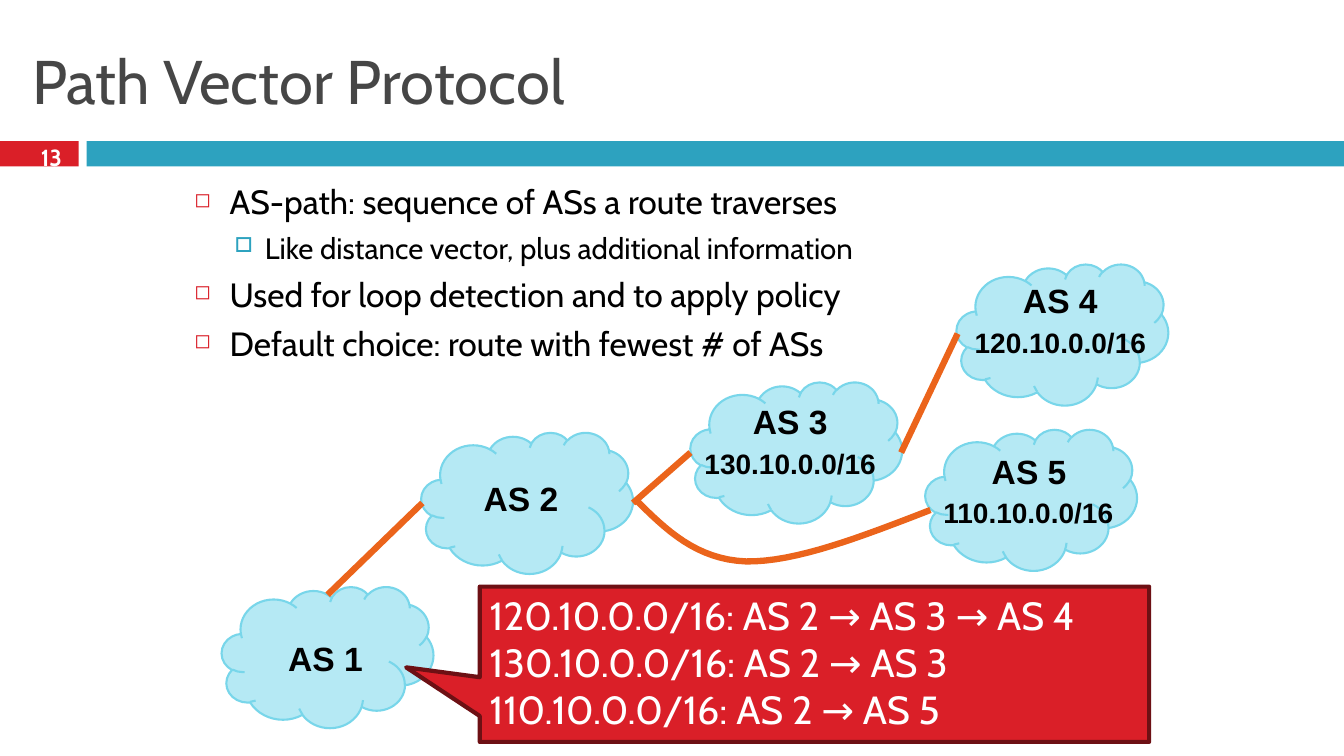
import pptx
import pptx.util
import pptx.dml.color
import pptx.enum.shapes
import pptx.enum.text
import pptx.oxml.ns
from lxml import etree

COL = ROW = pptx.util.Inches(0.1)
COLS, ROWS = 133.33, 75
MSO_SHAPE = pptx.enum.shapes.MSO_SHAPE
ANCHOR = pptx.enum.text.MSO_ANCHOR
ALIGN = pptx.enum.text.PP_ALIGN

COLORS = {
    "red": "DA1F28",
    "dark_red": "6D1014",
    "teal": "2DA2BF",
    "cloud": "B5E9F4",
    "cloud_edge": "78D6EA",
    "link": "EB641B",
    "title": "464646",
    "black": "000000",
    "white": "FFFFFF",
}

CLOUD_W, CLOUD_H = 21, 14
PREFIX_DX, PREFIX_DY = -4.8, 4.5
SYSTEMS = [
    ("AS 4", "120.10.0.0/16", (94.9, 26.2), (5.6, 1.1)),
    ("AS 2", None, (41.8, 42.9), (5.2, 4)),
    ("AS 1", None, (22, 58.2), (5.6, 4.6)),
    ("AS 5", "110.10.0.0/16", (91.8, 42.6), (5.6, 1.6)),
    ("AS 3", "130.10.0.0/16", (68.5, 37.9), (5.2, 1.4)),
]
LINKS = [
    ((41.9, 49.9), (32.5, 59)),
    ((62.8, 49.9), (68.5, 44.9)),
    ((95, 33.1), (89.4, 44.9)),
]
CURVE = [
    ((63.1, 49.6), (66.1, 52.6), (69.1, 55.5), (74, 55.7)),
    ((74, 55.7), (78.9, 55.8), (85.6, 53.2), (92.3, 50.6)),
]
CURVE_STEPS = 16

BULLETS = [
    (0, "AS-path: sequence of ASs a route traverses"),
    (1, "Like distance vector, plus additional information"),
    (0, "Used for loop detection and to apply policy"),
    (0, "Default choice: route with fewest # of ASs"),
]
BULLET_STYLES = [
    {"size": 24, "margin": 3.5, "hang": 3.5, "char": "◻", "color": "red", "pct": 60},
    {"size": 21, "margin": 7, "hang": 3, "char": "□", "color": "teal", "pct": 70},
]
ROUTES = [
    "120.10.0.0/16: AS 2 → AS 3 → AS 4",
    "130.10.0.0/16: AS 2 → AS 3",
    "110.10.0.0/16: AS 2 → AS 5",
]


def rgb(name):
    return pptx.dml.color.RGBColor.from_string(COLORS[name])


def grid(x, y, w, h):
    return int(x * COL), int(y * ROW), int(w * COL), int(h * ROW)


def set_line(sp, color, width):
    sp.line.color.rgb = rgb(color)
    sp.line.width = pptx.util.Pt(width)


def add_filled(s, kind, box, fill, edge=None, width=0):
    sp = s.shapes.add_shape(kind, *grid(*box))
    sp.shadow.inherit = False
    sp.fill.solid()
    sp.fill.fore_color.rgb = rgb(fill)
    if edge:
        set_line(sp, edge, width)
    else:
        sp.line.fill.background()
    return sp


def write(sp, lines, size, color, font="Cabin", bold=False, anchor=ANCHOR.TOP,
          align=ALIGN.LEFT, wrap=True):
    tf = sp.text_frame
    tf.word_wrap = wrap
    tf.vertical_anchor = anchor
    for i, line in enumerate(lines):
        p = tf.paragraphs[0] if i == 0 else tf.add_paragraph()
        p.text = line
        p.alignment = align
        p.font.name = font
        p.font.size = pptx.util.Pt(size)
        p.font.bold = bold
        p.font.color.rgb = rgb(color)
    return tf


def add_text(s, box, lines, size, color, **style):
    return write(s.shapes.add_textbox(*grid(*box)), lines, size, color, **style)


def set_bullet(p, style):
    qn = pptx.oxml.ns.qn
    p.font.size = pptx.util.Pt(style["size"])
    p.space_before = pptx.util.Pt(6)
    pPr = p._p.get_or_add_pPr()
    pPr.set("marL", str(int(style["margin"] * COL)))
    pPr.set("indent", str(-int(style["hang"] * COL)))
    marks = [
        etree.Element(qn("a:buClr")),
        etree.Element(qn("a:buSzPct"), val=str(style["pct"] * 1000)),
        etree.Element(qn("a:buChar"), char=style["char"]),
    ]
    etree.SubElement(marks[0], qn("a:srgbClr"), val=COLORS[style["color"]])
    for mark in marks:
        pPr.insert_element_before(mark, "a:tabLst", "a:defRPr", "a:extLst")


def add_bullets(s, box):
    tf = add_text(s, box, [text for _, text in BULLETS], 24, "black")
    for p, (level, _) in zip(tf.paragraphs, BULLETS):
        p.level = level
        set_bullet(p, BULLET_STYLES[level])


def add_labels(s, name, prefix, corner, offset):
    x, y = corner[0] + offset[0], corner[1] + offset[1]
    style = {"font": "Arial", "bold": True, "wrap": False}
    add_text(s, (x, y, 9.5, 5), [name], 24, "black", **style)
    if prefix:
        box = (x + PREFIX_DX, y + PREFIX_DY, 19.1, 4.3)
        add_text(s, box, [prefix], 20, "black", **style)


def add_link(s, start, end):
    sp = s.shapes.add_connector(pptx.enum.shapes.MSO_CONNECTOR.STRAIGHT,
                                *grid(*start, *end))
    set_line(sp, "link", 4.5)
    etree.SubElement(sp._element.spPr, pptx.oxml.ns.qn("a:effectLst"))


def bezier(points, t):
    weights = ((1 - t) ** 3, 3 * t * (1 - t) ** 2, 3 * t ** 2 * (1 - t), t ** 3)
    return tuple(int(COL * sum(w * p[axis] for w, p in zip(weights, points)))
                 for axis in (0, 1))


def add_curve(s):
    points = [bezier(part, i / CURVE_STEPS)
              for part in CURVE for i in range(CURVE_STEPS + 1)]
    builder = s.shapes.build_freeform(*points[0])
    builder.add_line_segments(points[1:], close=False)
    sp = builder.convert_to_shape()
    sp.shadow.inherit = False
    sp.fill.background()
    set_line(sp, "link", 4.5)


def add_routes(s):
    sp = add_filled(s, MSO_SHAPE.RECTANGULAR_CALLOUT, (47.6, 58.2, 66.4, 15.4),
                    "red", "dark_red", 3)
    sp.adjustments[0] = -0.61
    sp.adjustments[1] = 0.02
    write(sp, ROUTES, 28, "white")


def main():
    prs = pptx.Presentation()
    prs.slide_width, prs.slide_height = int(COLS * COL), int(ROWS * ROW)
    s = prs.slides.add_slide(prs.slide_layouts[6])

    add_filled(s, MSO_SHAPE.RECTANGLE, (0, 14, 7.8, 2.5), "red")
    add_filled(s, MSO_SHAPE.RECTANGLE, (8.6, 14, COLS - 8.6, 2.5), "teal")
    for _, _, corner, _ in SYSTEMS:
        add_filled(s, MSO_SHAPE.CLOUD, (*corner, CLOUD_W, CLOUD_H),
                   "cloud", "cloud_edge", 1.5)
    add_text(s, (2.2, 2.5, 128.9, 10.8), ["Path Vector Protocol"], 44, "title",
             anchor=ANCHOR.MIDDLE)
    add_bullets(s, (18.3, 17.5, 96.7, 24.3))
    for system in SYSTEMS:
        add_labels(s, *system)
    add_text(s, (2.2, 13.9, 5.8, 3.3), ["13"], 16.6, "white", bold=True,
             anchor=ANCHOR.MIDDLE, align=ALIGN.CENTER)
    for start, end in LINKS:
        add_link(s, start, end)
    add_routes(s)
    add_curve(s)
    prs.save("out.pptx")


if __name__ == "__main__":
    main()
